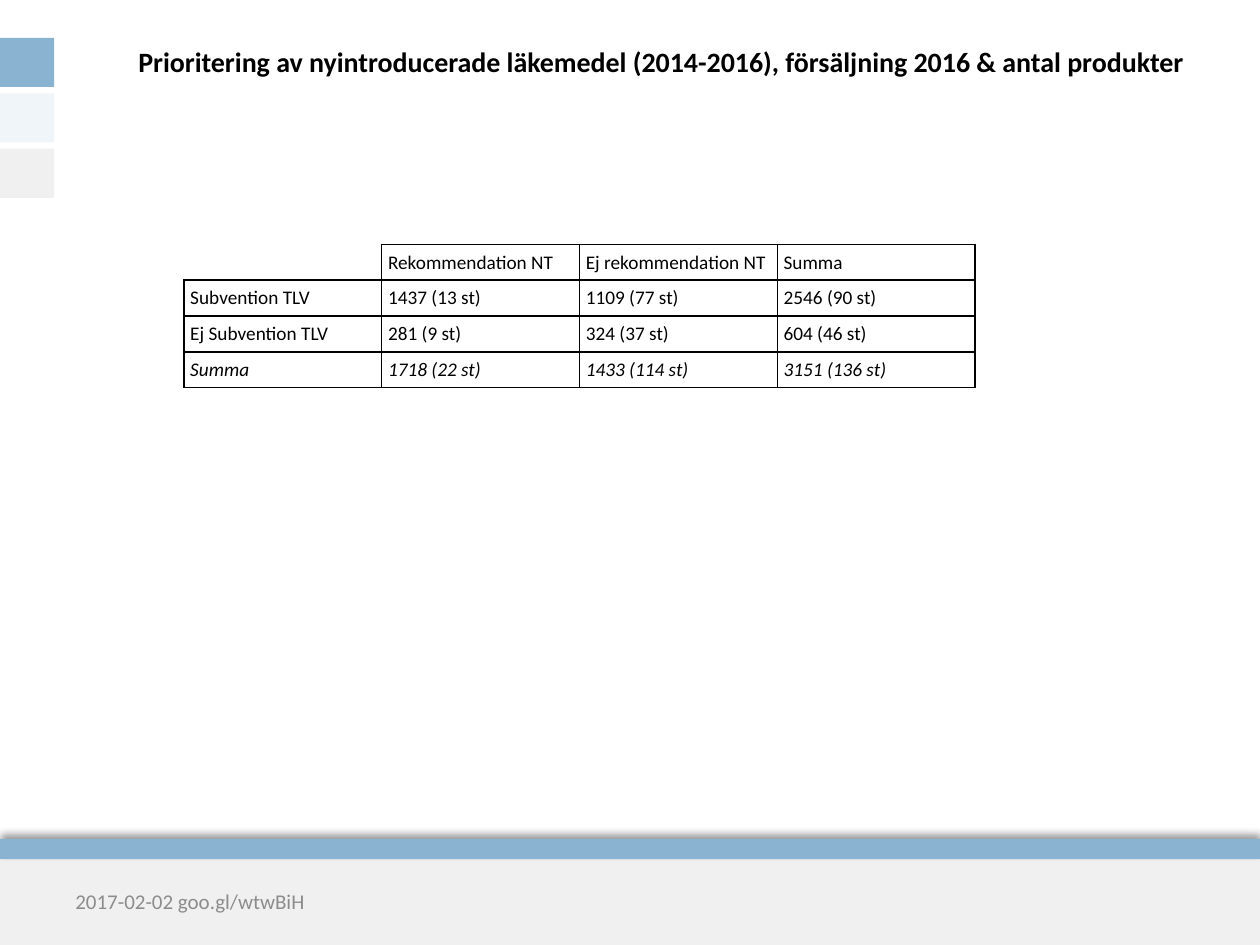
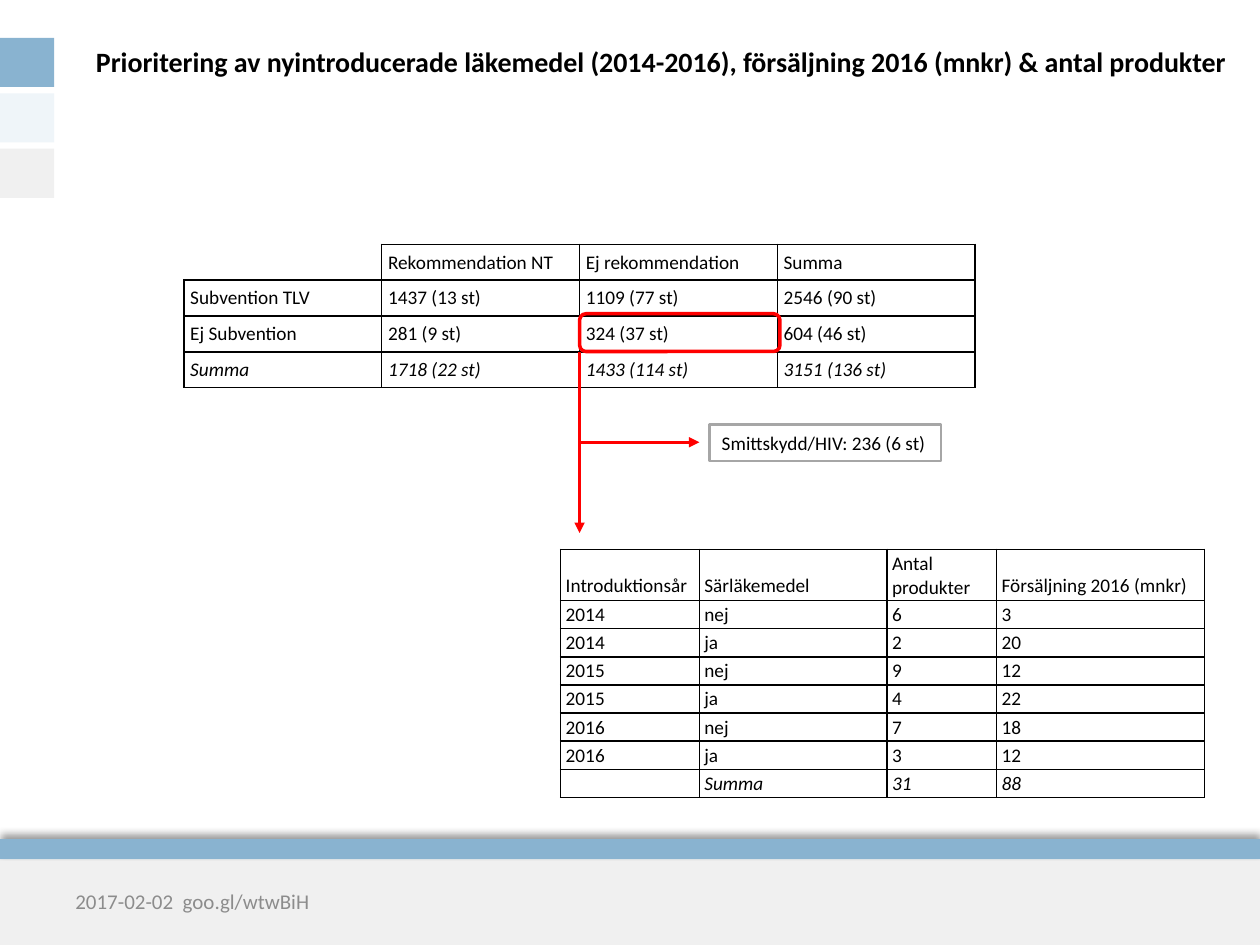
from lxml.etree import SubElement
from pptx import Presentation
from pptx.dml.color import RGBColor
from pptx.enum.shapes import MSO_CONNECTOR as CONN, MSO_SHAPE as SHAPE
from pptx.enum.text import MSO_ANCHOR as ANCHOR, MSO_AUTO_SIZE as AUTO, PP_ALIGN as ALIGN
from pptx.oxml.ns import qn
from pptx.util import Inches, Pt

BLACK = RGBColor(0x00, 0x00, 0x00)
WHITE = RGBColor(0xFF, 0xFF, 0xFF)
BLUE = RGBColor(0x89, 0xB3, 0xD0)
PALE = RGBColor(0xEF, 0xF5, 0xF9)
LIGHT = RGBColor(0xF0, 0xF0, 0xF0)
GREY = RGBColor(0x8C, 0x8C, 0x8C)
FRAME = RGBColor(0xA6, 0xA6, 0xA6)
RED = RGBColor(0xFF, 0x00, 0x00)
FONT = "Calibri"

BANDS = [
    (0, 6.82, 10, 0.68, LIGHT),
    (0, 6.66, 10, 0.16, BLUE),
    (0, 0.3, 0.43, 0.39, BLUE),
    (0, 0.74, 0.43, 0.39, PALE),
    (0, 1.18, 0.43, 0.39, LIGHT),
]
TITLE = "Prioritering av nyintroducerade läkemedel (2014-2016), försäljning 2016 "
SLIDES = [
    (TITLE + "& antal produkter", "2017-02-02 goo.gl/wtwBiH",
     "Ej rekommendation NT", "Ej Subvention TLV"),
    (TITLE + "(mnkr) & antal produkter", "2017-02-02  goo.gl/wtwBiH",
     "Ej rekommendation", "Ej Subvention"),
]
PRODUCTS = [
    ["Introduktionsår", "Särläkemedel", "Antal produkter", "Försäljning 2016 (mnkr)"],
    ["2014", "nej", "6", "3"],
    ["2014", "ja", "2", "20"],
    ["2015", "nej", "9", "12"],
    ["2015", "ja", "4", "22"],
    ["2016", "nej", "7", "18"],
    ["2016", "ja", "3", "12"],
    ["", "Summa", "31", "88"],
]


def add_run(p, text, size, color=BLACK, bold=False, italic=False):
    r = p.add_run()
    r.text = text
    r.font.name = FONT
    r.font.size = Pt(size)
    r.font.color.rgb = color
    r.font.bold = bold
    r.font.italic = italic


def add_grid(s, left, top, widths, heights, rows, insets, open_corner=False):
    frame = s.shapes.add_table(len(rows), len(widths), Inches(left), Inches(top),
                               Inches(sum(widths)), Inches(sum(heights)))
    table = frame.table
    table.first_row = table.horz_banding = False
    for col, width in zip(table.columns, widths):
        col.width = Inches(width)
    for row, height in zip(table.rows, heights):
        row.height = Inches(height)
    for i, row in enumerate(rows):
        for j, text in enumerate(row):
            cell = table.cell(i, j)
            cell.vertical_anchor = ANCHOR.BOTTOM
            (cell.margin_left, cell.margin_top,
             cell.margin_right, cell.margin_bottom) = [Inches(v) for v in insets]
            p = cell.text_frame.paragraphs[0]
            if text:
                add_run(p, text, 11, italic=i == len(rows) - 1)
            else:
                SubElement(p._p, qn("a:endParaRPr"), sz="1100")
            tcPr = cell._tc.get_or_add_tcPr()
            for side in ("lnL", "lnR", "lnT", "lnB"):
                ln = SubElement(tcPr, qn("a:" + side), w=str(Pt(1)))
                if open_corner and i == j == 0 and side in ("lnL", "lnT"):
                    SubElement(ln, qn("a:noFill"))
                else:
                    fill = SubElement(ln, qn("a:solidFill"))
                    SubElement(fill, qn("a:srgbClr"), val=str(BLACK))
            cell.fill.background()


prs = Presentation()
prs.slide_width = Inches(10)
prs.slide_height = Inches(7.5)

for title, footer, no_advice, no_subsidy in SLIDES:
    s = prs.slides.add_slide(prs.slide_layouts[5])
    for left, top, width, height, color in BANDS:
        sp = s.shapes.add_shape(SHAPE.RECTANGLE, Inches(left), Inches(top),
                                Inches(width), Inches(height))
        sp.shadow.inherit = False
        sp.fill.solid()
        sp.fill.fore_color.rgb = color
        sp.line.fill.background()
        if top == 6.66:
            effects = sp._element.spPr.find(qn("a:effectLst"))
            shadow = SubElement(effects, qn("a:outerShdw"), blurRad=str(Pt(4)),
                                dist=str(Pt(3)), dir="16200000", rotWithShape="0")
            tint = SubElement(shadow, qn("a:srgbClr"), val=str(BLACK))
            SubElement(tint, qn("a:alpha"), val="40000")

    sp = s.shapes.title
    sp.left, sp.top, sp.width, sp.height = [Inches(v) for v in (0.5, 0.3, 9.5, 0.38)]
    tf = sp.text_frame
    tf.auto_size = AUTO.NONE
    tf.vertical_anchor = ANCHOR.MIDDLE
    p = tf.paragraphs[0]
    p.alignment = ALIGN.CENTER
    add_run(p, title, 16, bold=True)

    sp = s.shapes.add_textbox(Inches(0.5), Inches(6.95), Inches(2.33), Inches(0.4))
    tf = sp.text_frame
    tf.word_wrap = True
    tf.vertical_anchor = ANCHOR.MIDDLE
    add_run(tf.paragraphs[0], footer, 12, GREY)

    sales = [
        ["", "Rekommendation NT", no_advice, "Summa"],
        ["Subvention TLV", "1437 (13 st)", "1109 (77 st)", "2546 (90 st)"],
        [no_subsidy, "281 (9 st)", "324 (37 st)", "604 (46 st)"],
        ["Summa", "1718 (22 st)", "1433 (114 st)", "3151 (136 st)"],
    ]
    add_grid(s, 1.46, 1.94, [1.57] * 4, [0.28] * 4, sales, [0.05] * 4, open_corner=True)

sp = s.shapes.add_shape(SHAPE.ROUNDED_RECTANGLE, Inches(4.6), Inches(2.49),
                        Inches(1.59), Inches(0.3))
sp.shadow.inherit = False
sp.fill.background()
sp.line.color.rgb = RED
sp.line.width = Pt(2)

for x1, y1, x2, y2 in [(4.6, 2.79, 4.6, 4.23), (4.6, 3.51, 5.55, 3.51)]:
    arrow = s.shapes.add_connector(CONN.STRAIGHT, Inches(x1), Inches(y1),
                                   Inches(x2), Inches(y2))
    arrow.line.color.rgb = RED
    arrow.line.width = Pt(1.5)
    SubElement(arrow.line._get_or_add_ln(), qn("a:tailEnd"), type="triangle")
    SubElement(arrow._element.spPr, qn("a:effectLst"))

sp = s.shapes.add_textbox(Inches(5.63), Inches(3.37), Inches(1.84), Inches(0.29))
sp.fill.solid()
sp.fill.fore_color.rgb = WHITE
sp.line.color.rgb = FRAME
sp.line.width = Pt(1.5)
tf = sp.text_frame
tf.word_wrap = False
tf.auto_size = AUTO.SHAPE_TO_FIT_TEXT
add_run(tf.paragraphs[0], "Smittskydd/HIV: 236 (6 st)", 11)

add_grid(s, 4.45, 4.36, [1.1, 1.49, 0.87, 1.65], [0.37] + [0.22] * 7, PRODUCTS,
         [0.04, 0.02, 0.02, 0.02])

prs.save("out.pptx")
